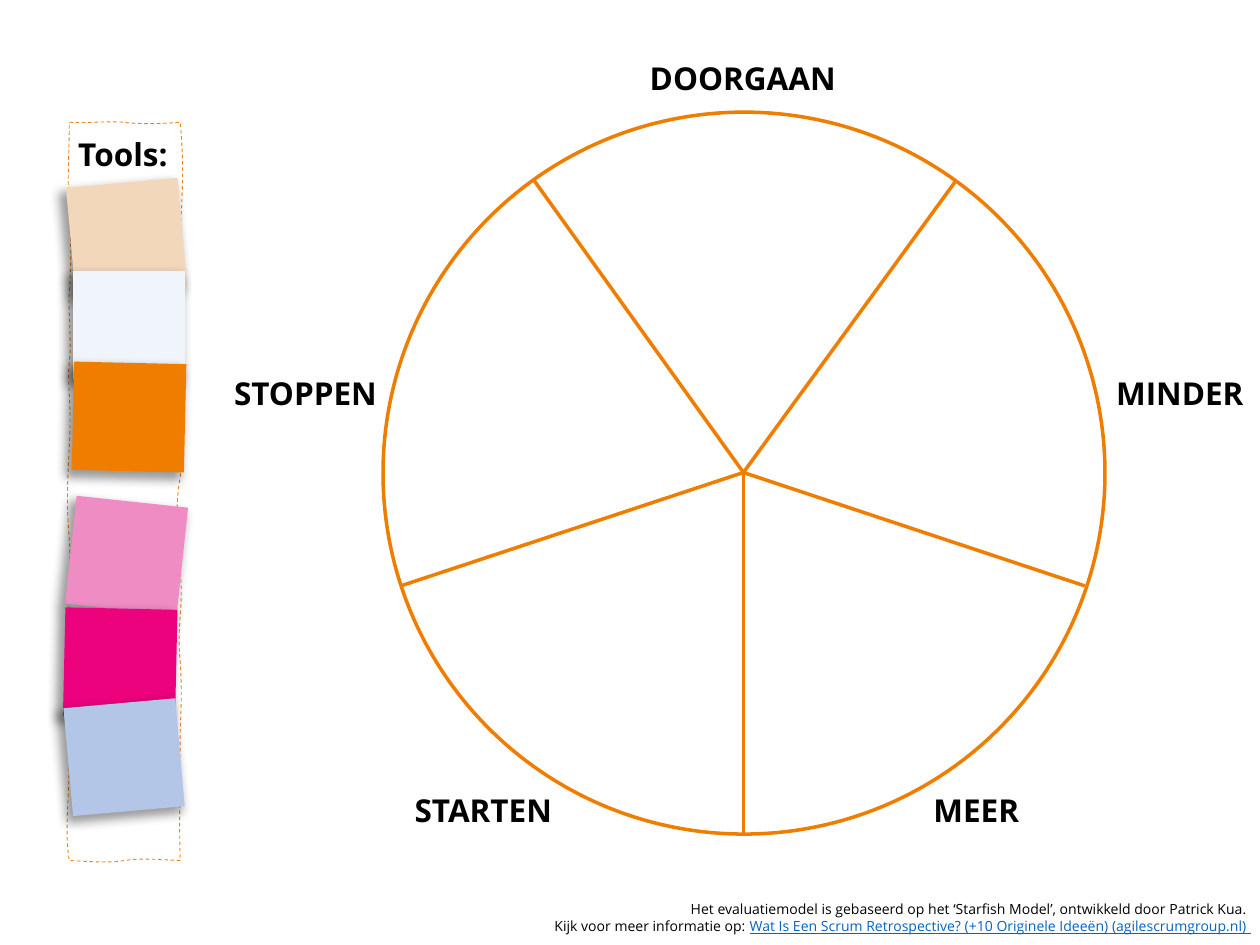
from lxml import etree
from pptx import Presentation
from pptx.dml.color import RGBColor
from pptx.enum.dml import MSO_LINE
from pptx.enum.shapes import MSO_CONNECTOR, MSO_SHAPE
from pptx.enum.text import MSO_AUTO_SIZE, PP_ALIGN as ALIGN
from pptx.oxml import parse_xml
from pptx.oxml.ns import nsdecls, qn
from pptx.util import Inches, Pt

ORANGE = "EE7D00"
color = RGBColor.from_string


def add_text(left, top, width, height, paragraphs, size=18, bold=True,
             align=ALIGN.LEFT, wrap=False, grow=False):
    """Add a text box; each paragraph is a list of (text, colour, underlined) runs."""
    box = slide.shapes.add_textbox(Inches(left), Inches(top), Inches(width), Inches(height))
    frame = box.text_frame
    frame.word_wrap = wrap
    if grow:
        frame.auto_size = MSO_AUTO_SIZE.SHAPE_TO_FIT_TEXT
    for index, runs in enumerate(paragraphs):
        paragraph = frame.add_paragraph() if index else frame.paragraphs[0]
        paragraph.alignment = align
        for text, hex_color, underlined in runs:
            run = paragraph.add_run()
            run.text = text
            run.font.name = "Open Sans"
            run.font.size = Pt(size)
            run.font.bold = bold
            run.font.underline = underlined
            run.font.color.rgb = color(hex_color)


presentation = Presentation()
presentation.slide_width = Inches(10)
presentation.slide_height = Inches(7.5)
slide = presentation.slides.add_slide(presentation.slide_layouts[6])

# Wheel with five sectors
circle = slide.shapes.add_shape(
    MSO_SHAPE.OVAL, Inches(3.04), Inches(0.89), Inches(5.73), Inches(5.73))
circle.shadow.inherit = False
circle.fill.background()
circle.line.color.rgb = color(ORANGE)
circle.line.width = Pt(2)

for rim_x, rim_y in [(4.23, 1.42), (3.18, 4.65), (5.9, 6.61), (8.61, 4.65), (7.59, 1.43)]:
    spoke = slide.shapes.add_connector(
        MSO_CONNECTOR.STRAIGHT, Inches(rim_x), Inches(rim_y), Inches(5.9), Inches(3.75))
    spoke.line.color.rgb = color(ORANGE)
    spoke.line.width = Pt(2)
    etree.SubElement(spoke._element.spPr, qn("a:effectLst"))

for label, left, top, width, align in [
    ("DOORGAAN", 5.05, 0.42, 1.69, ALIGN.CENTER),
    ("MINDER", 8.76, 2.92, 1.24, ALIGN.LEFT),
    ("MEER", 7.31, 6.23, 0.94, ALIGN.LEFT),
    ("STARTEN", 3.18, 6.23, 1.3, ALIGN.RIGHT),
    ("STOPPEN", 1.75, 2.92, 1.34, ALIGN.RIGHT),
]:
    add_text(left, top, width, 0.4, [[(label, "000000", False)]], align=align)

# Hand-drawn tools frame: each row is two control points and an end point
frame_left, frame_top = 0.55, 0.97
frame_curves = [
    (0.66, 0.98, 0.85, 0.96, 0.98, 0.97),
    (1.11, 0.99, 1.34, 0.98, 1.43, 0.97),
    (1.45, 1.15, 1.46, 1.44, 1.43, 1.82),
    (1.40, 2.21, 1.42, 2.19, 1.43, 2.56),
    (1.44, 2.92, 1.44, 3.02, 1.43, 3.17),
    (1.42, 3.32, 1.45, 3.62, 1.43, 3.79),
    (1.40, 3.95, 1.39, 4.18, 1.43, 4.52),
    (1.46, 4.85, 1.40, 4.95, 1.43, 5.25),
    (1.45, 5.55, 1.43, 5.71, 1.43, 5.86),
    (1.43, 6.02, 1.42, 6.41, 1.43, 6.83),
    (1.22, 6.82, 1.11, 6.81, 0.99, 6.83),
    (0.86, 6.85, 0.74, 6.84, 0.55, 6.83),
    (0.51, 6.59, 0.55, 6.37, 0.55, 5.98),
    (0.55, 5.59, 0.57, 5.44, 0.55, 5.13),
    (0.53, 4.82, 0.57, 4.53, 0.55, 4.28),
    (0.53, 4.04, 0.53, 3.90, 0.55, 3.55),
    (0.57, 3.20, 0.53, 3.01, 0.55, 2.88),
    (0.57, 2.74, 0.54, 2.45, 0.55, 2.32),
    (0.56, 2.19, 0.57, 1.93, 0.55, 1.71),
    (0.53, 1.48, 0.55, 1.21, 0.55, 0.97),
]
builder = slide.shapes.build_freeform(Inches(frame_left), Inches(frame_top), scale=1.0)
builder.add_line_segments(
    [(Inches(curve[4]), Inches(curve[5])) for curve in frame_curves], close=True)
tools_frame = builder.convert_to_shape()
# Turn each straight segment into a Bézier curve
segments = list(tools_frame._element.iter(qn("a:lnTo")))
for segment, curve in zip(segments, frame_curves):
    bezier = etree.Element(qn("a:cubicBezTo"))
    for x, y in zip(curve[::2], curve[1::2]):
        etree.SubElement(bezier, qn("a:pt"), x=str(Inches(x) - Inches(frame_left)),
                         y=str(Inches(y) - Inches(frame_top)))
    segment.getparent().replace(segment, bezier)
tools_frame.shadow.inherit = False
tools_frame.fill.background()
tools_frame.line.color.rgb = color("E9841D")
tools_frame.line.width = Pt(0.5)
tools_frame.line.dash_style = MSO_LINE.DASH

# Sticky notes, with the heading between the two sets of three
for index, (left, top, rotation, fill) in enumerate([
    (0.56, 1.45, -5.1, "F3D7BB"),
    (0.58, 2.15, 0, "F0F4FB"),
    (0.58, 2.88, 1.3, ORANGE),
    (0.56, 3.98, 6.1, "EF8CC4"),
    (0.51, 4.83, 1.3, "ED027E"),
    (0.54, 5.58, -5.1, "B4C6E7"),
]):
    if index == 3:
        add_text(0.5, 1.02, 0.95, 0.4, [[("Tools:", "000000", False)]],
                 align=ALIGN.CENTER, wrap=True, grow=True)
    note = slide.shapes.add_shape(
        MSO_SHAPE.RECTANGLE, Inches(left), Inches(top), Inches(0.89), Inches(0.86))
    note.rotation = rotation
    note.fill.solid()
    note.fill.fore_color.rgb = color(fill)
    note.line.fill.background()
    note._element.spPr.append(parse_xml(
        f'<a:effectLst {nsdecls("a")}>'
        f'<a:outerShdw blurRad="{Pt(6)}" dist="{Pt(3)}" dir="{130 * 60000}" '
        'sx="103000" sy="103000" algn="tr" rotWithShape="0">'
        '<a:srgbClr val="000000"><a:alpha val="40000"/></a:srgbClr>'
        '</a:outerShdw></a:effectLst>'))

add_text(2.77, 7.1, 7.26, 0.37, [
    [("Het evaluatiemodel is gebaseerd op het ‘Starfish Model’, ontwikkeld door Patrick Kua. ",
      "000000", False)],
    [("Kijk voor meer informatie op: ", "000000", False),
     ("Wat Is Een Scrum Retrospective? (+10 Originele Ideeën) (agilescrumgroup.nl) ",
      "0563C1", True)],
], size=8, bold=False, align=ALIGN.RIGHT, wrap=True, grow=True)

presentation.save("out.pptx")
